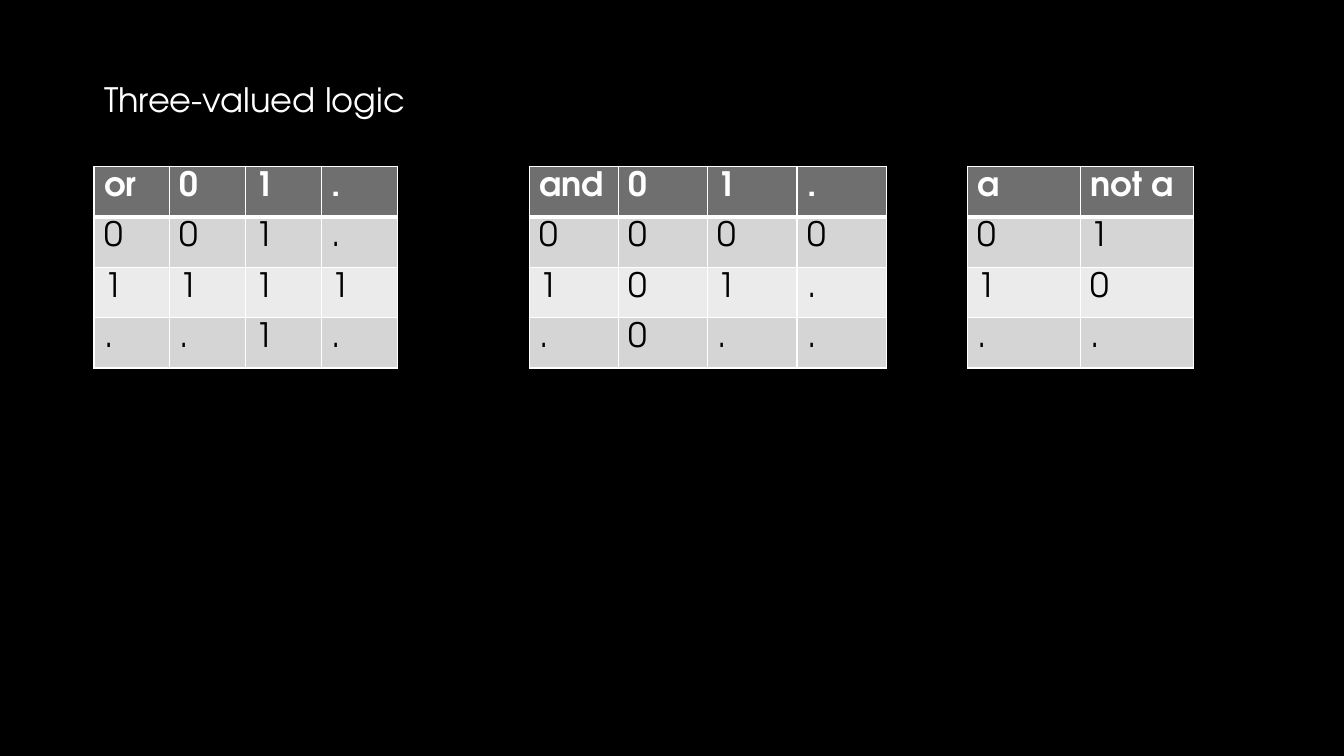
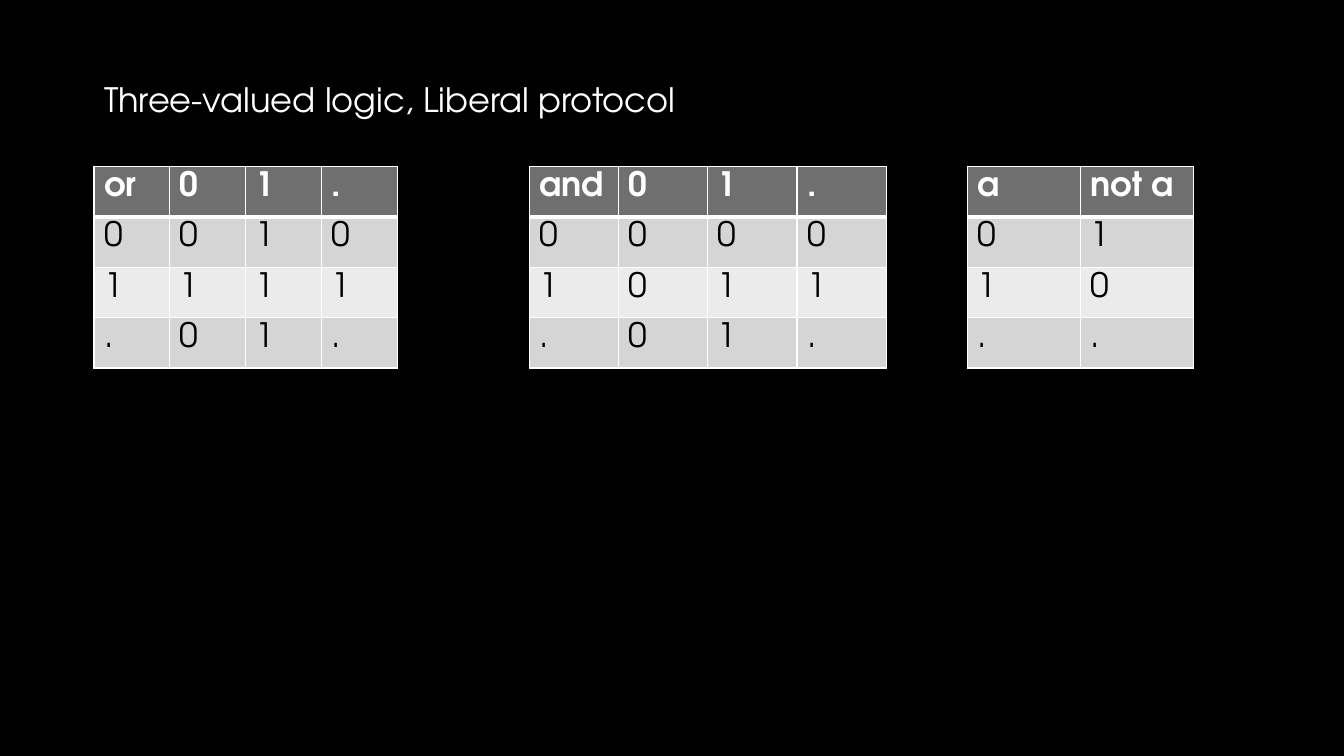
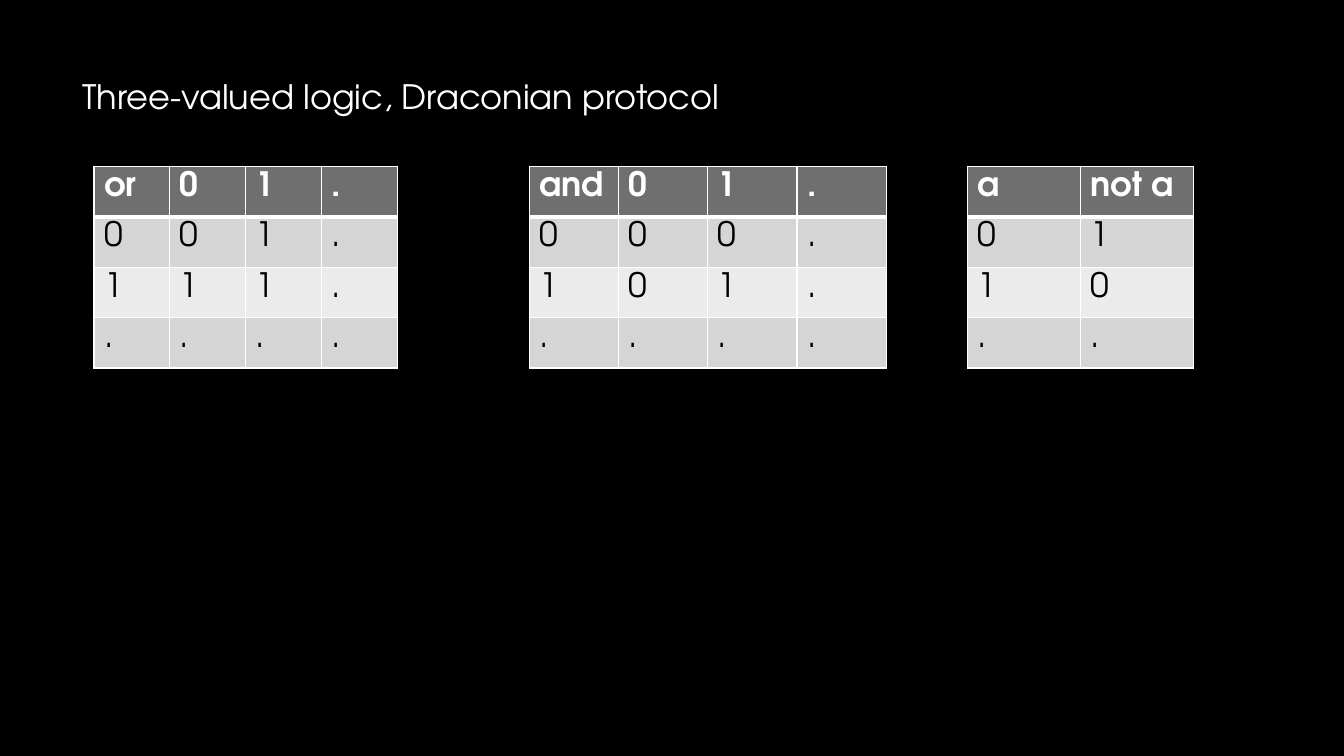
from dataclasses import dataclass

from lxml import etree
from pptx import Presentation
from pptx.dml.color import RGBColor
from pptx.enum.text import MSO_ANCHOR, MSO_AUTO_SIZE, PP_ALIGN
from pptx.oxml.ns import qn
from pptx.util import Inches, Pt

TOP = MSO_ANCHOR.TOP
GROW = MSO_AUTO_SIZE.SHAPE_TO_FIT_TEXT
LEFT = PP_ALIGN.LEFT
TITLE_ONLY = 5


@dataclass(frozen=True)
class Theme:
    font: str = "TeX Gyre Adventor"
    size: int = 24
    back: str = "000000"
    light: str = "FFFFFF"
    dark: str = "000000"
    header: str = "6F6F6F"
    bands: tuple = ("EBEBEB", "D5D5D5")
    thin: int = 1
    thick: int = 3


class Deck:
    def __init__(self, theme):
        self.theme = theme
        self.prs = Presentation()
        self.prs.slide_width = Inches(13.33)
        self.prs.slide_height = Inches(7.5)
        self.fill(self.prs.slide_master.background, theme.back)

    def x(self, percent):
        return round(self.prs.slide_width * percent / 100)

    def y(self, percent):
        return round(self.prs.slide_height * percent / 100)

    def fill(self, target, color):
        target.fill.solid()
        target.fill.fore_color.rgb = RGBColor.from_string(color)

    def text(self, tf, content, color, bold=False):
        p = tf.paragraphs[0]
        p.alignment = LEFT
        r = p.add_run()
        r.text = content
        style = {"name": self.theme.font, "size": Pt(self.theme.size), "bold": bold}
        for key, value in style.items():
            setattr(r.font, key, value)
        r.font.color.rgb = RGBColor.from_string(color)

    def add_slide(self):
        self.s = self.prs.slides.add_slide(self.prs.slide_layouts[TITLE_ONLY])

    def title(self, content, left, top, width):
        sp = self.s.shapes.title
        box = {"left": self.x(left), "top": self.y(top),
               "width": self.x(width), "height": self.y(6.67)}
        for key, value in box.items():
            setattr(sp, key, value)
        tf = sp.text_frame
        frame = {"word_wrap": True, "auto_size": GROW, "vertical_anchor": TOP}
        for key, value in frame.items():
            setattr(tf, key, value)
        self.text(tf, content, self.theme.light)

    def borders(self, cell, top, bottom):
        thin = self.theme.thin
        tc_pr = cell._tc.get_or_add_tcPr()
        for side, width in {"L": thin, "R": thin, "T": top, "B": bottom}.items():
            ln = etree.SubElement(tc_pr, qn("a:ln" + side), w=str(Pt(width)))
            solid = etree.SubElement(ln, qn("a:solidFill"))
            etree.SubElement(solid, qn("a:srgbClr"), val=self.theme.light)

    def table(self, rows, left, col_width, top=22, row_height=6.67):
        t = self.theme
        n_rows, n_cols = len(rows), len(rows[0])
        table = self.s.shapes.add_table(
            n_rows, n_cols, self.x(left), self.y(top),
            self.x(col_width * n_cols), self.y(row_height * n_rows)).table
        table.horz_banding = False
        for col in table.columns:
            col.width = self.x(col_width)
        for i, row in enumerate(rows):
            table.rows[i].height = self.y(row_height)
            head = i == 0
            for j, content in enumerate(row):
                cell = table.cell(i, j)
                self.borders(cell, t.thick if i == 1 else t.thin,
                             t.thick if head else t.thin)
                self.fill(cell, t.header if head else t.bands[i % 2])
                self.text(cell.text_frame, content, t.light if head else t.dark, head)


VALUES = "01."
NOT_ROWS = [("a", "not a"), "01", "10", ".."]
TITLE_BOX = (7, 9.73, 69.1)
SLIDES = [
    ("Three-valued logic", TITLE_BOX,
     ("01.", "111", ".1."), ("000", "01.", "0..")),
    ("Three-valued logic, Liberal protocol", TITLE_BOX,
     ("010", "111", "01."), ("000", "011", "01.")),
    ("Three-valued logic, Draconian protocol", (5.4, 9.33, 55.65),
     ("01.", "11.", "..."), ("00.", "01.", "...")),
]


def truth_rows(operator, results):
    return [(operator, *VALUES)] + [(v, *row) for v, row in zip(VALUES, results)]


def main():
    deck = Deck(Theme())
    for title, box, or_results, and_results in SLIDES:
        deck.add_slide()
        deck.title(title, *box)
        deck.table(truth_rows("or", or_results), 7, 5.64)
        deck.table(truth_rows("and", and_results), 39.38, 6.64)
        deck.table(NOT_ROWS, 72, 8.4)
    deck.prs.save("out.pptx")


if __name__ == "__main__":
    main()
